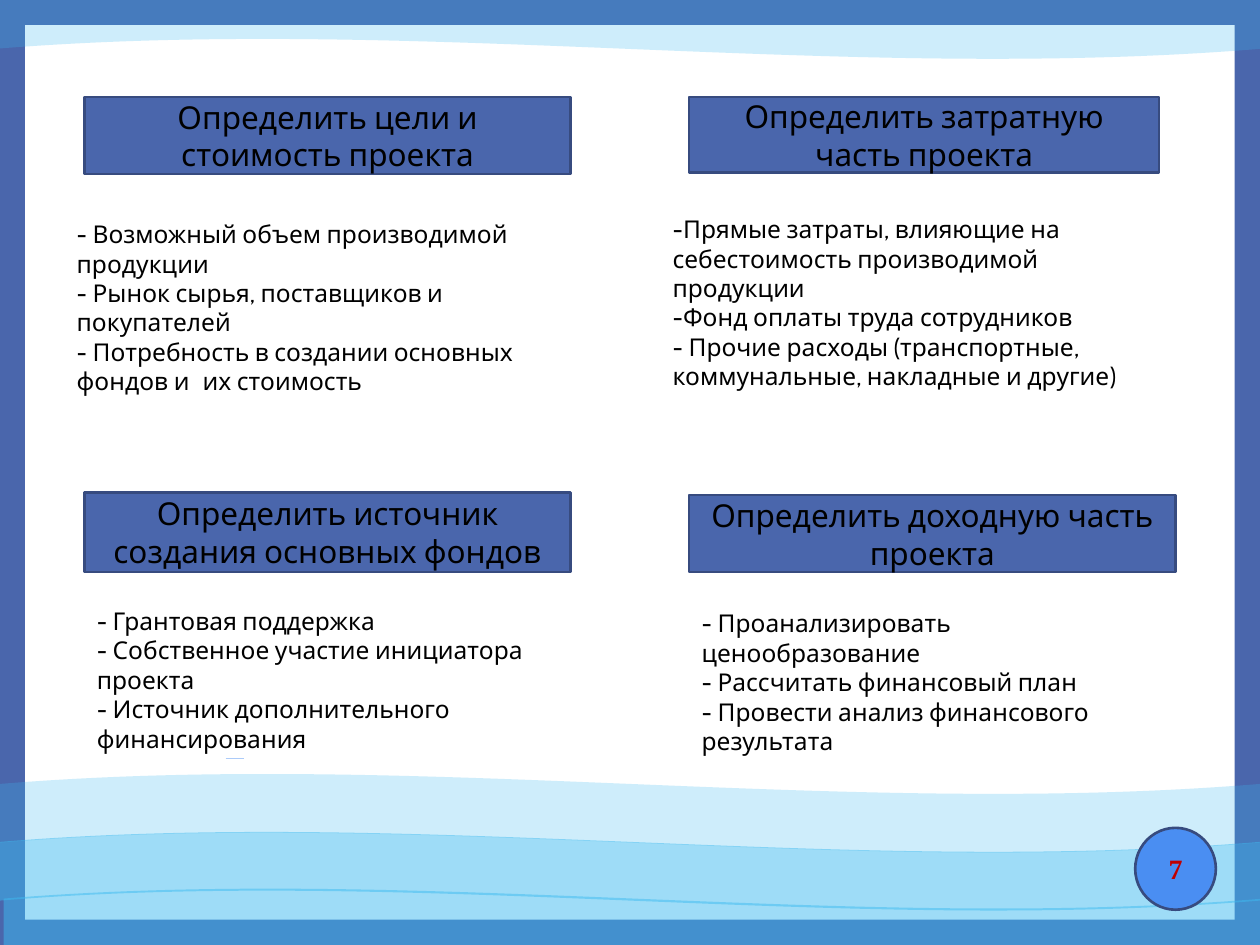
from collections import namedtuple

from lxml.etree import SubElement
from pptx import Presentation
from pptx.dml.color import RGBColor
from pptx.enum.shapes import MSO_CONNECTOR as Connector, MSO_SHAPE as Preset
from pptx.enum.text import MSO_ANCHOR as Anchor, MSO_AUTO_SIZE as AutoSize, PP_ALIGN as Align
from pptx.oxml.ns import qn
from pptx.util import Inches, Pt

BLUE = RGBColor(0x4A, 0x66, 0xAC)
NAVY = RGBColor(0x37, 0x4B, 0x7F)
SKY = RGBColor(0x3E, 0xBB, 0xF0)
BADGE = RGBColor(0x4A, 0x8E, 0xF2)
PALE = RGBColor(0xAC, 0xCB, 0xF9)
WHITE = RGBColor(0xFF, 0xFF, 0xFF)
BLACK = RGBColor(0x00, 0x00, 0x00)
RED = RGBColor(0xC0, 0x00, 0x00)

COLUMNS, ROWS = 100, 75
CELL = Inches(0.1)

HEADING_FONT = {"name": "Cabin", "size": Pt(18)}
BODY_FONT = {"name": "Cabin", "size": Pt(14)}
NUMBER_FONT = {"name": "Times New Roman", "size": Pt(16), "bold": True}

Box = namedtuple("Box", "left top width height")
Panel = namedtuple("Panel", "box heading heading_size body items")

PANELS = [
    Panel(Box(6.7, 7.7, 38.6, 19.6), "Определить цели и стоимость проекта", (38.6, 6.1),
          Box(-1.6, 9.2, 42.5, 10.4),
          ["- Возможный объем производимой продукции",
           "- Рынок сырья, поставщиков и покупателей",
           "- Потребность в создании основных фондов и\tих стоимость"]),
    Panel(Box(54.7, 7.7, 38.6, 23.9), "Определить затратную часть проекта", (37.3, 6),
          Box(-2.3, 8.8, 41.7, 15.1),
          ["-Прямые затраты, влияющие на себестоимость производимой продукции",
           "-Фонд оплаты труда сотрудников",
           "- Прочие расходы (транспортные, коммунальные, накладные и другие)"]),
    Panel(Box(6.7, 39.1, 38.6, 18.9), "Определить источник создания основных фондов", (38.6, 6.3),
          Box(0, 8.5, 38.6, 10.4),
          ["- Грантовая поддержка",
           "- Собственное участие инициатора проекта",
           "- Источник дополнительного финансирования"]),
    Panel(Box(54.7, 39.3, 38.6, 16.6), "Определить доходную часть проекта", (38.6, 6.1),
          Box(0, 8.5, 38.6, 8.1),
          ["- Проанализировать ценообразование",
           "- Рассчитать финансовый план",
           "- Провести анализ финансового результата"]),
]


def to_lengths(box):
    """Turn grid units into slide lengths."""
    return [int(value * CELL) for value in box]


def apply_format(target, values):
    """Set every attribute named in a dict of format values."""
    for name, value in values.items():
        setattr(target, name, value)


def write_lines(frame, lines, font, color, alignment):
    """Write one formatted paragraph per line."""
    for index, line in enumerate(lines):
        paragraph = frame.add_paragraph() if index else frame.paragraphs[0]
        paragraph.alignment = alignment
        run = paragraph.add_run()
        run.text = line
        apply_format(run.font, font)
        run.font.color.rgb = color


def add_filled(slide, preset, box, fill, line=None):
    """Add a flat preset shape with an optional outline."""
    shape = slide.shapes.add_shape(preset, *to_lengths(box))
    shape.shadow.inherit = False
    shape.fill.solid()
    shape.fill.fore_color.rgb = fill
    if line is None:
        shape.line.fill.background()
    else:
        shape.line.color.rgb = line
        shape.line.width = Pt(1.5)
    return shape


def add_label(slide, preset, box, fill, text, font, color):
    """Add an outlined shape with centred text."""
    shape = add_filled(slide, preset, box, fill, NAVY)
    apply_format(shape.text_frame, {"word_wrap": True, "vertical_anchor": Anchor.MIDDLE})
    write_lines(shape.text_frame, [text], font, color, Align.CENTER)


def add_wave(slide, box, opacity):
    """Add a translucent wave band."""
    wave = add_filled(slide, Preset.WAVE, box, SKY)
    wave.adjustments[0] = 0.13
    wave.adjustments[1] = 0
    color = wave.fill._xPr.find(qn("a:solidFill"))[0]
    SubElement(color, qn("a:alpha"), val=str(opacity * 1000))


def add_dash(slide, box):
    """Add the short pale rule along the top of its box."""
    left, top, width, _ = to_lengths(box)
    dash = slide.shapes.add_connector(Connector.STRAIGHT, left, top, left + width, top)
    dash.line.color.rgb = PALE
    dash.line.width = Pt(0.75)
    SubElement(dash._element.spPr, qn("a:effectLst"))


def add_backdrop(slide, box):
    """Draw the framed sheet, the waves and the short rule."""
    left, top, width, height = box
    margin, band = 2, 6.3
    background = slide.background.fill
    background.solid()
    background.fore_color.rgb = BLUE
    sheet = Box(left + margin, top + margin, width - 2 * margin, height - 2 * margin)
    add_filled(slide, Preset.RECTANGLE, sheet, WHITE)
    add_wave(slide, Box(left - 0.4, top - 1.6, width + 0.4, band), 25)
    add_dash(slide, Box(left + 17.9, top + 60.2, 1.5, 0))
    for shift, row, opacity in [(0, 61.4, 25), (0, 66, 50), (0.3, 70.5, 50)]:
        add_wave(slide, Box(left + shift, top + row, width, band), opacity)


def add_panel(slide, panel):
    """Place a heading bar and its list inside the panel's box."""
    left, top = panel.box.left, panel.box.top
    add_label(slide, Preset.RECTANGLE, Box(left, top, *panel.heading_size), BLUE,
              panel.heading, HEADING_FONT, BLACK)
    body = panel.body._replace(left=left + panel.body.left, top=top + panel.body.top)
    frame = slide.shapes.add_textbox(*to_lengths(body)).text_frame
    apply_format(frame, {"word_wrap": True, "auto_size": AutoSize.SHAPE_TO_FIT_TEXT})
    write_lines(frame, panel.items, BODY_FONT, BLACK, Align.LEFT)


def main():
    """Build and save the slide."""
    presentation = Presentation()
    apply_format(presentation, {"slide_width": COLUMNS * CELL, "slide_height": ROWS * CELL})
    slide = presentation.slides.add_slide(presentation.slide_layouts[6])
    add_backdrop(slide, Box(0, 0, COLUMNS, ROWS))
    add_label(slide, Preset.OVAL, Box(90.1, 65.7, 6.4, 6.5), BADGE, "7", NUMBER_FONT, RED)
    for panel in PANELS:
        add_panel(slide, panel)
    presentation.save("out.pptx")


if __name__ == "__main__":
    main()
